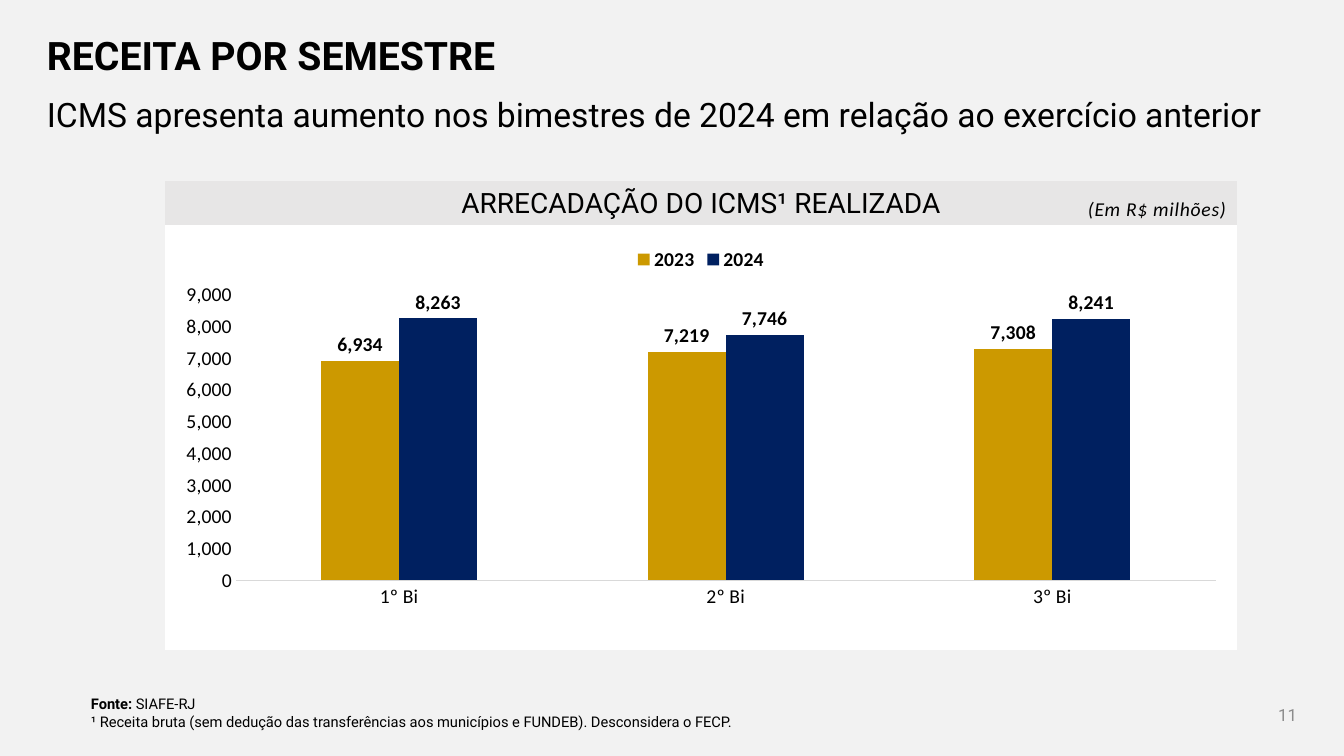
from pptx import Presentation
from pptx.chart.data import CategoryChartData
from pptx.dml.color import RGBColor
from pptx.enum.chart import XL_CHART_TYPE, XL_LABEL_POSITION, XL_LEGEND_POSITION, XL_TICK_MARK
from pptx.enum.shapes import MSO_SHAPE
from pptx.enum.text import MSO_ANCHOR, PP_ALIGN
from pptx.util import Pt

RECT = MSO_SHAPE.RECTANGLE
COLUMN = XL_CHART_TYPE.COLUMN_CLUSTERED
OUTSIDE = XL_LABEL_POSITION.OUTSIDE_END
ABOVE = XL_LEGEND_POSITION.TOP
NO_TICK = XL_TICK_MARK.NONE
TOP, MIDDLE = MSO_ANCHOR.TOP, MSO_ANCHOR.MIDDLE
LEFT, CENTER, RIGHT = PP_ALIGN.LEFT, PP_ALIGN.CENTER, PP_ALIGN.RIGHT

TITLE = "RECEITA POR SEMESTRE"
CLAIM = "ICMS apresenta aumento nos bimestres de 2024 em relação ao exercício anterior"
HEADER = "ARRECADAÇÃO DO ICMS¹ REALIZADA"
UNIT = "(Em R$ milhões)"
NOTES = [
    [("Fonte: ", True), ("SIAFE-RJ", False)],
    "¹ Receita bruta (sem dedução das transferências aos municípios e FUNDEB). Desconsidera o FECP.",
]
PAGE = "11"
TERMS = ["1º Bi", "2º Bi", "3º Bi"]
SERIES = [
    ("2023", "CC9900", [6934, 7219, 7308]),
    ("2024", "002060", [8263, 7746, 8241]),
]
MILLION = 10 ** 6
FORMAT = "#,##0,,"
EMU = 914400 / 100.8
X, Y, W = 165, 181, 1072
HEAD, BODY = 44, 425


def px(*sizes):
    return [round(size * EMU) for size in sizes]


def color(code):
    return RGBColor.from_string(code)


def style(font, size, face="Calibri", ink="000000", bold=False, italic=False):
    font.size, font.name = Pt(size), face
    font.bold, font.italic = bold, italic
    font.color.rgb = color(ink)


def write(frame, paras, size, face="Roboto", ink="000000", bold=False, italic=False,
          align=LEFT, anchor=TOP, line=None, space=None):
    frame.word_wrap = True
    frame.vertical_anchor = anchor
    for i, parts in enumerate(paras):
        para = frame.add_paragraph() if i else frame.paragraphs[0]
        para.alignment = align
        if line:
            para.line_spacing = line
        for words, heavy in [(parts, bold)] if isinstance(parts, str) else parts:
            run = para.add_run()
            run.text = words
            style(run.font, size, face, ink, heavy, italic)
            if space:
                run._r.get_or_add_rPr().set("spc", str(space))


def label(box, paras, size, **look):
    write(slide.shapes.add_textbox(*px(*box)).text_frame, paras, size, **look)


def panel(box, fill):
    shape = slide.shapes.add_shape(RECT, *px(*box))
    shape.shadow.inherit = False
    shape.fill.solid()
    shape.fill.fore_color.rgb = color(fill)
    shape.line.fill.background()
    return shape


deck = Presentation()
deck.slide_width, deck.slide_height = px(1344, 756)
slide = deck.slides.add_slide(deck.slide_layouts[6])
slide.background.fill.solid()
slide.background.fill.fore_color.rgb = color("F2F2F2")

head = panel((X, Y, W, HEAD), "E7E6E6")
write(head.text_frame, [HEADER], 20, align=CENTER)
panel((X, Y + HEAD, W, BODY), "FFFFFF")

label((37, 81, 1270, 59), [CLAIM], 24, anchor=MIDDLE, line=1.2)
label((81, 690, 1211, 45), NOTES, 10.5)
label((1048, 187, 188, 40), [UNIT], 14, face="Calibri", italic=True,
      align=RIGHT, line=1.2, space=50)
label((37, 18, 896, 80), [TITLE], 28, bold=True, anchor=MIDDLE, line=0.9)

data = CategoryChartData(number_format=FORMAT)
data.categories = TERMS
for name, _, values in SERIES:
    data.add_series(name, [value * MILLION for value in values])
chart = slide.shapes.add_chart(COLUMN, *px(X, 236, W, 380), data).chart
chart.has_title = False
style(chart.font, 14)
chart.has_legend = True
chart.legend.position = ABOVE
chart.legend.include_in_layout = False
style(chart.legend.font, 14, bold=True)

for axis in (chart.category_axis, chart.value_axis):
    axis.major_tick_mark = axis.minor_tick_mark = NO_TICK
    axis.has_major_gridlines = False
    style(axis.tick_labels.font, 14)
base = chart.category_axis.format.line
base.color.rgb = color("D9D9D9")
base.width = Pt(0.75)
scale = chart.value_axis
scale.minimum_scale = 0
scale.format.line.fill.background()
scale.tick_labels.number_format = FORMAT
scale.tick_labels.number_format_is_linked = False

plot = chart.plots[0]
plot.gap_width = 219
plot.overlap = 0
plot.vary_by_categories = False
for bars, (_, fill, _) in zip(plot.series, SERIES):
    bars.format.fill.solid()
    bars.format.fill.fore_color.rgb = color(fill)
    tags = bars.data_labels
    tags.show_value = True
    tags.position = OUTSIDE
    tags.number_format = FORMAT
    tags.number_format_is_linked = False
    style(tags.font, 14, bold=True)

label((1211, 695, 96, 40), [PAGE], 12, ink="8C8C8C", align=RIGHT, anchor=MIDDLE)
deck.save("out.pptx")
